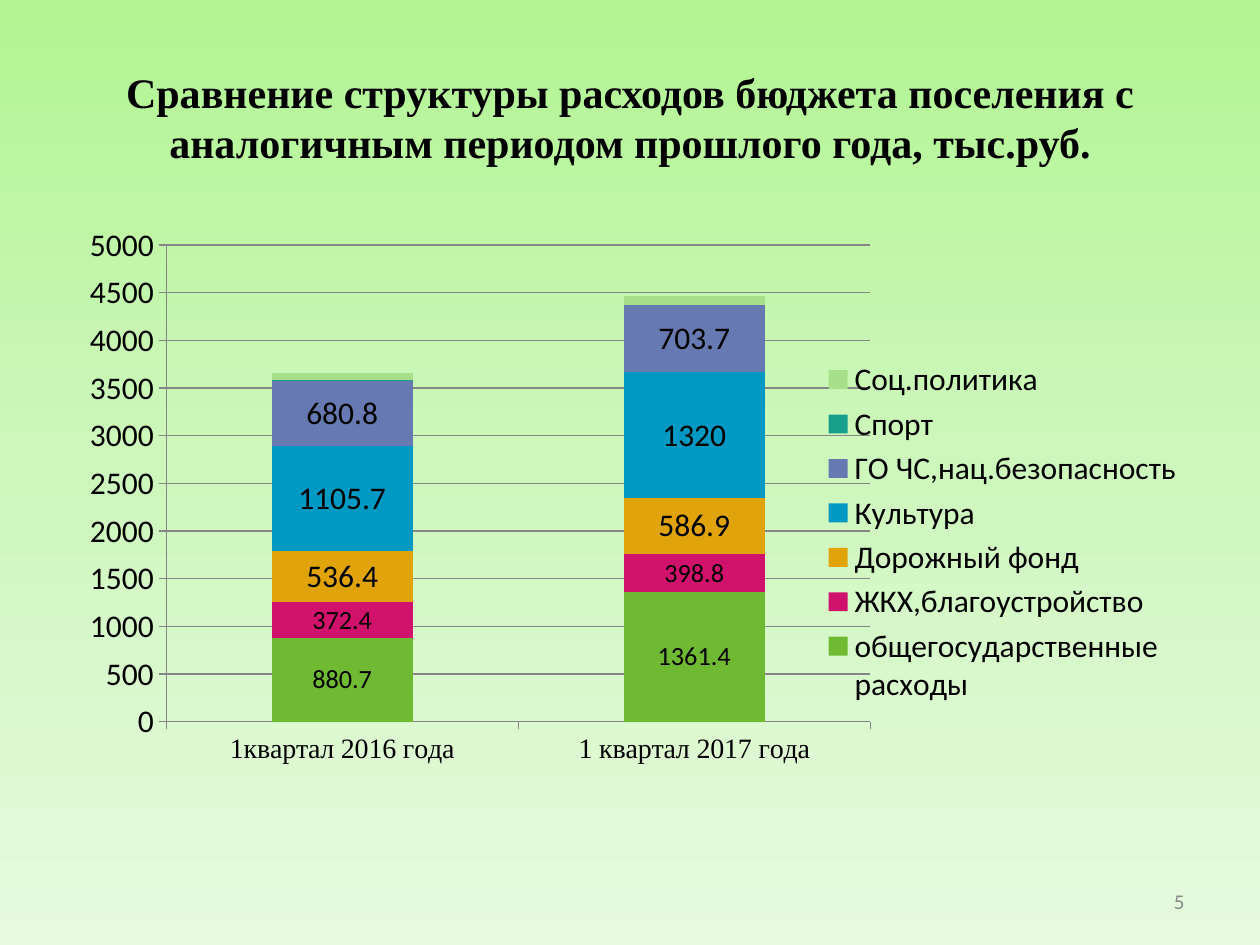
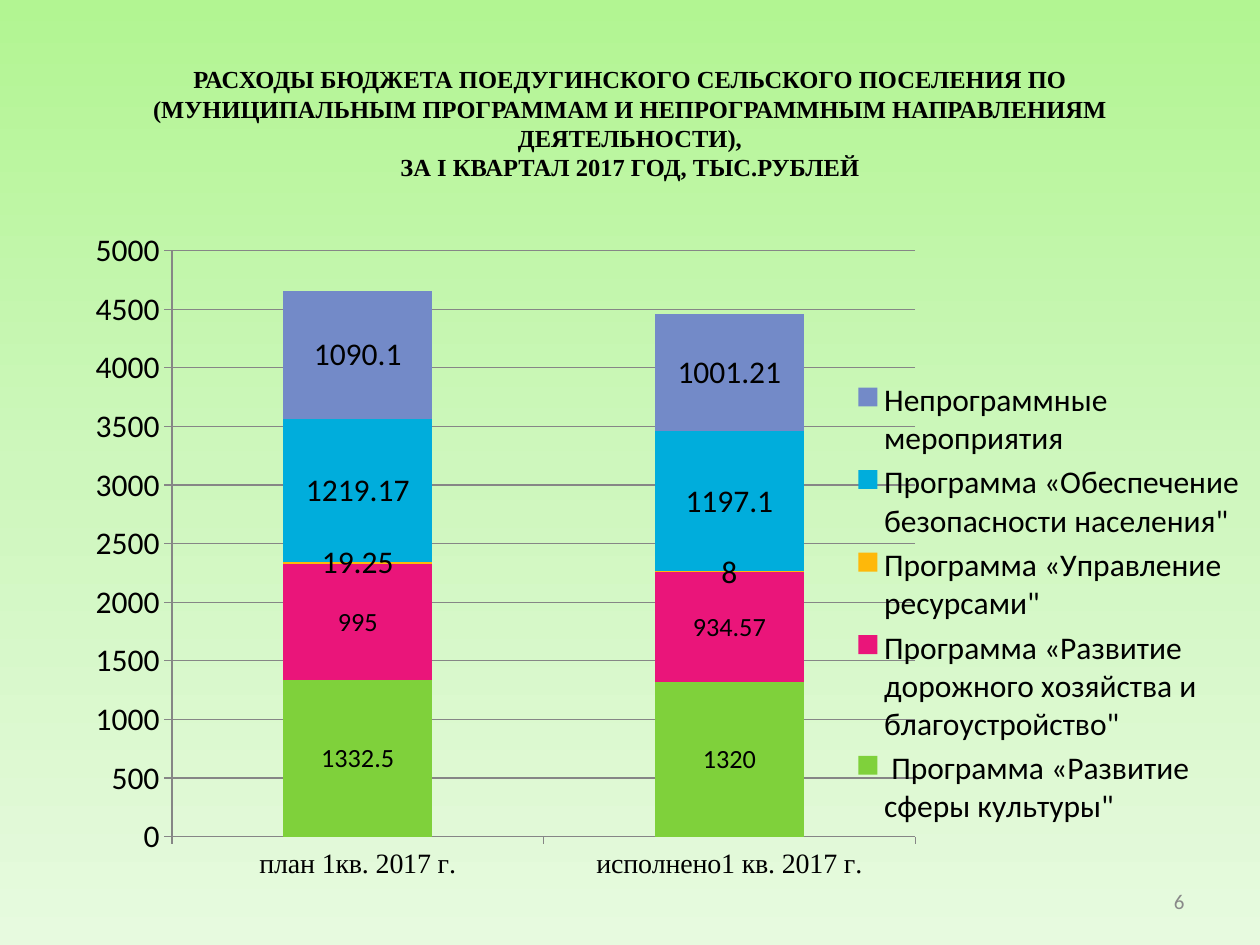
from copy import deepcopy

from lxml import etree
from pptx import Presentation
from pptx.chart.data import CategoryChartData
from pptx.dml.color import RGBColor
from pptx.enum.chart import XL_CHART_TYPE, XL_LEGEND_POSITION, XL_TICK_MARK
from pptx.enum.text import MSO_ANCHOR, MSO_AUTO_SIZE, PP_ALIGN
from pptx.oxml.ns import qn
from pptx.util import Pt

STACKED = XL_CHART_TYPE.COLUMN_STACKED
LEGEND_RIGHT = XL_LEGEND_POSITION.RIGHT
TICK_OUTSIDE = XL_TICK_MARK.OUTSIDE
MIDDLE = MSO_ANCHOR.MIDDLE
NO_AUTOFIT = MSO_AUTO_SIZE.NONE
CENTER, RIGHT = PP_ALIGN.CENTER, PP_ALIGN.RIGHT

# Shared look
PX = 914400 / 126
BLACK = RGBColor(0x00, 0x00, 0x00)
NUMBER_GREY = RGBColor(0x89, 0x89, 0x89)
GRID_GREY = RGBColor(0x86, 0x86, 0x86)
BACKGROUND = [
    (0, RGBColor(0xB2, 0xF5, 0x92)),
    (0.5, RGBColor(0xCE, 0xF7, 0xBD)),
    (1, RGBColor(0xE7, 0xFA, 0xDF)),
]
GREEN = RGBColor(0x7F, 0xD1, 0x3B)
PINK = RGBColor(0xEA, 0x15, 0x7A)
AMBER = RGBColor(0xFE, 0xB8, 0x0A)
CYAN = RGBColor(0x00, 0xAD, 0xDC)
BLUE = RGBColor(0x73, 0x8A, 0xC8)
DARK_GREEN = RGBColor(0x70, 0xBA, 0x33)
DARK_PINK = RGBColor(0xD1, 0x12, 0x6C)
DARK_AMBER = RGBColor(0xE1, 0xA3, 0x0A)
DARK_CYAN = RGBColor(0x00, 0x99, 0xC4)
DARK_BLUE = RGBColor(0x66, 0x7A, 0xB1)
TEAL = RGBColor(0x17, 0x9F, 0x8C)
PALE_GREEN = RGBColor(0xA8, 0xDF, 0x8A)

SERIF, SANS = "Times New Roman", "Calibri"
CHART_FONT = {"name": SANS, "size": Pt(18)}
CATEGORY_FONT = {"name": SERIF, "size": Pt(16)}
NUMBER_FONT = {"name": SANS, "size": Pt(12)}
PLOT_AREA = {"x": 0.091, "y": 0.04, "w": 0.621, "h": 0.764}
NUMBER_BOX = (903, 876, 294, 50)

# Content: series are (name, values, colour, label size or None)
SLIDES = [
    {
        "number": "5",
        "title": "Сравнение структуры расходов бюджета поселения с "
                 "аналогичным периодом прошлого года, тыс.руб.",
        "title_size": 24,
        "title_box": (63, 38, 1134, 158),
        "chart_box": (63, 220, 1134, 624),
        "categories": ["1квартал 2016 года", "1 квартал 2017 года"],
        "series": [
            ("общегосударственные расходы", (880.7, 1361.4), DARK_GREEN, 15),
            ("ЖКХ,благоустройство", (372.4, 398.8), DARK_PINK, 15),
            ("Дорожный фонд", (536.4, 586.9), DARK_AMBER, 18),
            ("Культура", (1105.7, 1320), DARK_CYAN, 18),
            ("ГО ЧС,нац.безопасность", (680.8, 703.7), DARK_BLUE, 18),
            ("Спорт", (10, 0), TEAL, None),
            ("Соц.политика", (75, 90), PALE_GREEN, None),
        ],
    },
    {
        "number": "6",
        "title": "РАСХОДЫ БЮДЖЕТА ПОЕДУГИНСКОГО СЕЛЬСКОГО ПОСЕЛЕНИЯ ПО\v"
                 "(МУНИЦИПАЛЬНЫМ ПРОГРАММАМ И НЕПРОГРАММНЫМ НАПРАВЛЕНИЯМ "
                 "ДЕЯТЕЛЬНОСТИ),\vЗА I КВАРТАЛ 2017 ГОД, ТЫС.РУБЛЕЙ",
        "title_size": 14,
        "title_box": (63, 54, 1134, 138),
        "chart_box": (63, 220, 1197, 767),
        "categories": ["план 1кв. 2017 г.", "исполнено1 кв. 2017 г."],
        "series": [
            (' Программа «Развитие сферы культуры"', (1332.5, 1320), GREEN, 15),
            ('Программа «Развитие дорожного хозяйства и благоустройство"',
             (995, 934.57), PINK, 15),
            ('Программа «Управление ресурсами"', (19.25, 8), AMBER, 18),
            ('Программа «Обеспечение безопасности населения"',
             (1219.17, 1197.1), CYAN, 18),
            ("Непрограммные мероприятия", (1090.1, 1001.21), BLUE, 18),
        ],
    },
]


def scaled(lengths):
    return [round(length * PX) for length in lengths]


def set_font(font, formats, color=BLACK):
    for name, value in formats.items():
        setattr(font, name, value)
    font.color.rgb = color


def write(box, text, formats, color, alignment):
    frame = box.text_frame
    frame.text = text
    frame.word_wrap = True
    frame.auto_size = NO_AUTOFIT
    frame.vertical_anchor = MIDDLE
    para = frame.paragraphs[0]
    para.alignment = alignment
    for span in para.runs:
        set_font(span.font, formats, color)


def paint_background(master):
    fill = master.background.fill
    fill.gradient()
    fill.gradient_angle = 270
    first = master.element.xpath(".//p:bg//a:gs")[0]
    first.addnext(deepcopy(first))
    for stop, (position, color) in zip(fill.gradient_stops, BACKGROUND):
        stop.position = position
        stop.color.rgb = color


def add_title(page, content):
    title = page.shapes.title
    title.left, title.top, title.width, title.height = scaled(content["title_box"])
    formats = {"name": SERIF, "size": Pt(content["title_size"]), "bold": True}
    write(title, content["title"], formats, BLACK, CENTER)


def fix_plot_area(chart):
    area = chart.element.find(".//" + qn("c:plotArea"))
    for old in area.findall(qn("c:layout")):
        area.remove(old)
    layout = etree.Element(qn("c:layout"))
    manual = etree.SubElement(layout, qn("c:manualLayout"))
    values = {"layoutTarget": "inner", "xMode": "edge", "yMode": "edge", **PLOT_AREA}
    for name, value in values.items():
        etree.SubElement(manual, qn("c:" + name)).set("val", str(value))
    area.insert(0, layout)


def format_axes(chart):
    axes = chart.value_axis, chart.category_axis
    for axis, formats in zip(axes, (CHART_FONT, CATEGORY_FONT)):
        axis.major_tick_mark = TICK_OUTSIDE
        set_font(axis.tick_labels.font, formats)
        axis.format.line.color.rgb = GRID_GREY
        axis.format.line.width = Pt(0.75)
    scale = {"minimum_scale": 0, "maximum_scale": 5000, "major_unit": 500,
             "has_major_gridlines": True}
    for name, value in scale.items():
        setattr(chart.value_axis, name, value)
    grid = chart.value_axis.major_gridlines.format.line
    grid.color.rgb = GRID_GREY
    grid.width = Pt(0.75)


def add_budget_chart(page, content):
    data = CategoryChartData()
    data.categories = content["categories"]
    for name, values, _, _ in content["series"]:
        data.add_series(name, values)
    chart = page.shapes.add_chart(STACKED, *scaled(content["chart_box"]), data).chart
    chart.has_title = False
    set_font(chart.font, CHART_FONT)
    chart.has_legend = True
    chart.legend.position = LEGEND_RIGHT
    chart.legend.include_in_layout = False
    set_font(chart.legend.font, CHART_FONT)
    format_axes(chart)
    fix_plot_area(chart)

    # Stacked bars and their labels
    plot = chart.plots[0]
    plot.gap_width, plot.overlap, plot.vary_by_categories = 150, 100, False
    for series, (_, _, color, label_size) in zip(plot.series, content["series"]):
        series.format.fill.solid()
        series.format.fill.fore_color.rgb = color
        if label_size:
            labels = series.data_labels
            labels.show_value = True
            set_font(labels.font, {"name": SANS, "size": Pt(label_size)})


def main():
    deck = Presentation()
    deck.slide_width, deck.slide_height = scaled((1260, 945))
    paint_background(deck.slide_master)
    title_only = deck.slide_layouts[5]
    for content in SLIDES:
        page = deck.slides.add_slide(title_only)
        add_title(page, content)
        add_budget_chart(page, content)
        number = page.shapes.add_textbox(*scaled(NUMBER_BOX))
        write(number, content["number"], NUMBER_FONT, NUMBER_GREY, RIGHT)
    deck.save("out.pptx")


if __name__ == "__main__":
    main()
